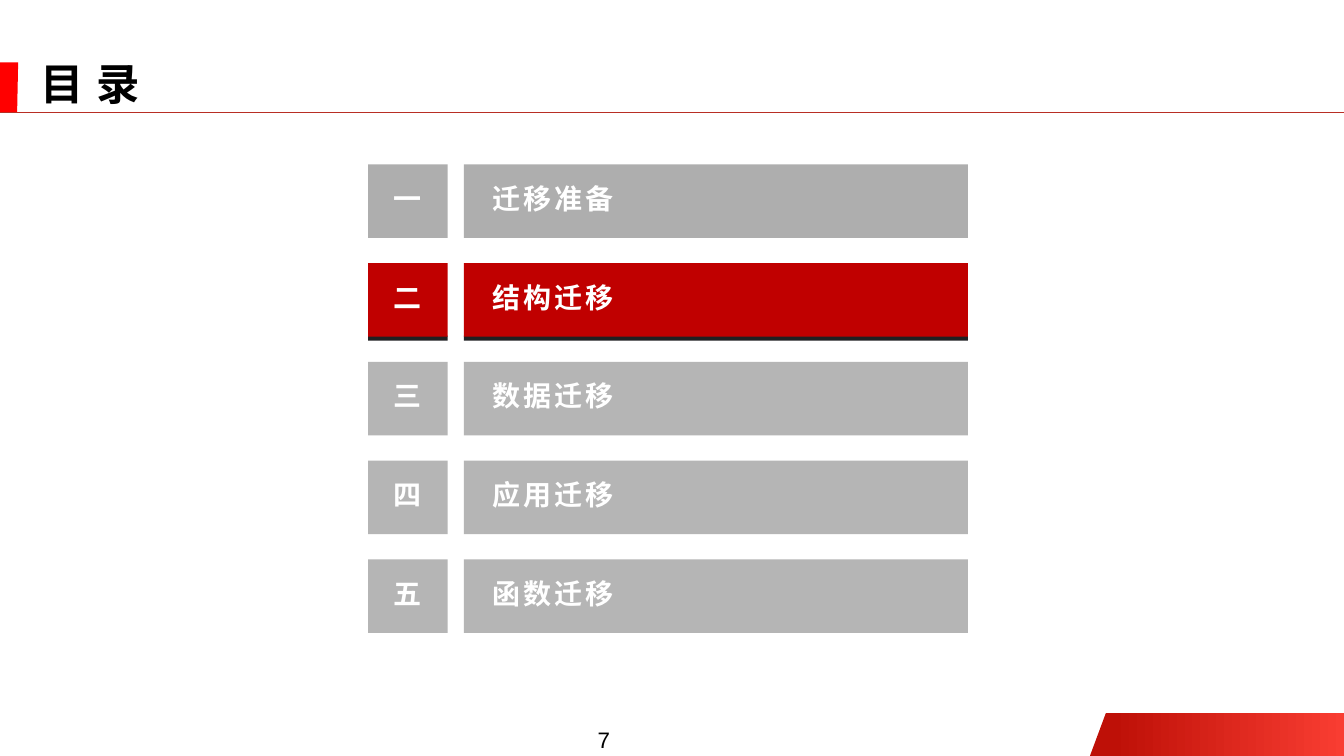
"""Builds an agenda slide with the current chapter highlighted."""
from lxml.etree import SubElement
from pptx import Presentation
from pptx.dml.color import RGBColor
from pptx.enum.shapes import MSO_CONNECTOR as LINK, MSO_SHAPE as SHAPE
from pptx.enum.text import MSO_ANCHOR as ANCHOR, MSO_AUTO_SIZE as FIT, PP_ALIGN as ALIGN
from pptx.oxml.ns import qn
from pptx.util import Inches, Pt

WIDE, HIGH = 13.33, 7.5
TOP, STEP, ROW = 1.63, 0.98, 0.73
MARK, NAME = (3.65, 0.79), (4.6, 5)
SANS = "Noto Sans CJK SC"
ITEMS = [
    ("一", "迁移准备", "AEAEAE"),
    ("二", "结构迁移", "C00000"),
    ("三", "数据迁移", "B5B5B5"),
    ("四", "应用迁移", "B5B5B5"),
    ("五", "函数迁移", "B5B5B5"),
]


def paint(fill, tone):
    fill.solid()
    fill.fore_color.rgb = RGBColor.from_string(tone)


def style(frame, text, size, tone, face=SANS, bold=True, space=0):
    frame.text = text
    para = frame.paragraphs[0]
    for run in para.runs:
        font = run.font
        font.size, font.bold, font.name = Pt(size), bold, face
        paint(font.fill, tone)
        props = run._r.get_or_add_rPr()
        SubElement(props, qn("a:ea")).set("typeface", face)
        if space:
            props.set("spc", str(space * 100))
    return para


def block(slide, left, top, width, height, tone):
    box = slide.shapes.add_shape(
        SHAPE.RECTANGLE, Inches(left), Inches(top), Inches(width), Inches(height))
    box.shadow.inherit = False
    box.line.fill.background()
    paint(box.fill, tone)


def label(slide, left, top, width, height, text, wrap=False, **look):
    box = slide.shapes.add_textbox(
        Inches(left), Inches(top), Inches(width), Inches(height))
    box.text_frame.word_wrap = wrap
    return style(box.text_frame, text, **look)


def outline(slide, points):
    spots = [(Inches(x), Inches(y)) for x, y in points]
    pen = slide.shapes.build_freeform(*spots[0])
    pen.add_line_segments(spots[1:])
    form = pen.convert_to_shape()
    form.shadow.inherit = False
    form.line.fill.background()
    return form


def frame(slide):
    foot = outline(slide, [(10.81, HIGH), (10.97, 7.07), (WIDE, 7.07), (WIDE, HIGH)])
    foot.fill.gradient()
    foot.fill.gradient_angle = 0
    shades = [("BE1007", 0.09), ("F93D32", 1)]
    for stop, (tone, place) in zip(foot.fill.gradient_stops, shades):
        stop.color.rgb = RGBColor.from_string(tone)
        stop.position = place
    tab = outline(slide, [(0, 0.62), (0.18, 0.62), (0.17, 1.12), (0, 1.12)])
    paint(tab.fill, "FF0000")
    rule = slide.shapes.add_connector(
        LINK.STRAIGHT, 0, Inches(1.11), Inches(WIDE), Inches(1.11))
    rule.line.width = Pt(0.5)
    paint(rule.line.fill, "B82E24")
    SubElement(rule._element.spPr, qn("a:effectLst"))
    page = label(slide, 5.75, 7.15, 0.48, 0.37, "7",
                 size=16, tone="000000", face="Arial", bold=False)
    page.alignment = ALIGN.CENTER


def title(slide, text):
    head = slide.shapes.title
    head.left, head.top = Inches(0.3), Inches(0.59)
    head.width, head.height = Inches(12.26), Inches(0.53)
    body = head.text_frame
    body.auto_size, body.vertical_anchor = FIT.NONE, ANCHOR.MIDDLE
    para = style(body, text, 31, "000000", space=1)
    para.alignment, para.line_spacing = ALIGN.LEFT, 0.9


def agenda(slide):
    for row, (mark, name, tone) in enumerate(ITEMS):
        top = TOP + row * STEP
        for left, width in (MARK, NAME):
            if tone == "C00000":
                block(slide, left, top + ROW - 0.01, width, 0.05, "202022")
            block(slide, left, top, width, ROW, tone)
        label(slide, MARK[0] + 0.15, top + 0.12, 0.48, 0.44, mark,
              size=20, tone="FFFFFF")
        label(slide, NAME[0] + 0.19, top + 0.12, 4.63, 0.44, name, wrap=True,
              size=20, tone="FFFFFF", space=2)


def main():
    deck = Presentation()
    deck.slide_width, deck.slide_height = Inches(WIDE), Inches(HIGH)
    slide = deck.slides.add_slide(deck.slide_layouts[5])
    paint(slide.background.fill, "FFFFFF")
    frame(slide)
    title(slide, "目 录")
    agenda(slide)
    deck.save("out.pptx")


if __name__ == "__main__":
    main()
